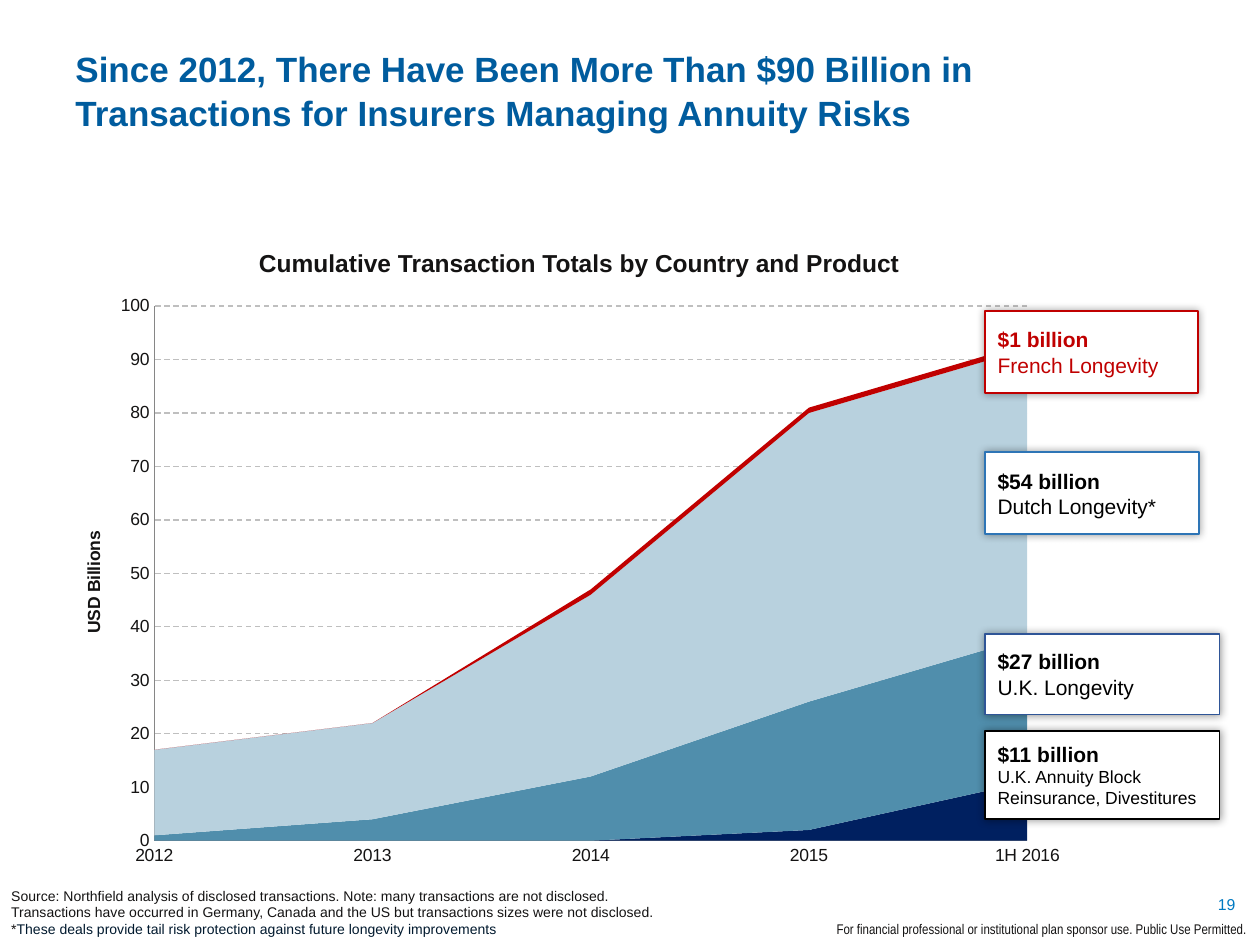
from collections import namedtuple
from dataclasses import dataclass

from lxml import etree
from pptx import Presentation
from pptx.chart.data import CategoryChartData
from pptx.dml.color import RGBColor
from pptx.enum.chart import XL_CHART_TYPE as ChartType, XL_TICK_MARK as TickMark
from pptx.enum.dml import MSO_LINE as LineStyle
from pptx.enum.shapes import MSO_SHAPE as Shape
from pptx.enum.text import MSO_ANCHOR as Anchor, PP_ALIGN as Align
from pptx.oxml import parse_xml
from pptx.oxml.ns import nsdecls, qn
from pptx.util import Pt

Box = namedtuple("Box", "left top width height")
Run = namedtuple("Run", "text size color bold", defaults=[False])


@dataclass(frozen=True)
class Theme:
    font: str = "Arial"
    narrow: str = "Arial Narrow"
    title: str = "005C9E"
    ink: str = "141313"
    note: str = "00192E"
    number: str = "007AC2"
    black: str = "000000"
    white: str = "FFFFFF"
    red: str = "C00000"
    dutch_edge: str = "2E75B6"
    uk_edge: str = "2F5597"
    grid: str = "BFBFBF"
    axis: str = "868686"
    navy: str = "002060"
    teal: str = "508EAC"
    pale: str = "B8D1DE"
    title_size: float = 20
    heading_size: float = 14
    amount_size: float = 12
    chart_size: float = 10
    number_size: float = 9
    small_size: float = 8


THEME = Theme()


def rgb(color):
    return RGBColor.from_string(color)


def apply(target, values):
    for name, value in values.items():
        setattr(target, name, value)


def style_font(font, size, color, bold=False, name=THEME.font):
    apply(font, {"name": name, "size": Pt(size), "bold": bold})
    font.color.rgb = rgb(color)


def write(frame, paragraphs, align=Align.LEFT, anchor=Anchor.TOP, spacing=1.0, font=THEME.font):
    apply(frame, {"word_wrap": True, "vertical_anchor": anchor})
    for index, runs in enumerate(paragraphs):
        paragraph = frame.paragraphs[0] if index == 0 else frame.add_paragraph()
        apply(paragraph, {"alignment": align, "line_spacing": spacing})
        for part in runs:
            run = paragraph.add_run()
            run.text = part.text
            style_font(run.font, part.size, part.color, part.bold, font)


def add_text(slide, box, paragraphs, **layout):
    textbox = slide.shapes.add_textbox(*map(Pt, box))
    write(textbox.text_frame, paragraphs, **layout)


def add_header(slide, box):
    title = "Since 2012, There Have Been More Than $90 Billion in Transactions for Insurers Managing Annuity Risks"
    add_text(slide, box, [[Run(title, THEME.title_size, THEME.title, True)]], spacing=1.05)


def add_footer(slide, box):
    small, ink = THEME.small_size, THEME.ink
    number = Box(box.left + 672, box.top + 4.3, 41, 18)
    legal = Box(box.left + 334, box.top + 19.4, 386, 17.3)
    sources = Box(box.left - 0.7, box.top, 547, 36)
    add_text(slide, number, [[Run("19", THEME.number_size, THEME.number)]],
             align=Align.RIGHT, anchor=Anchor.MIDDLE)
    permission = "For financial professional or institutional plan sponsor use. Public Use Permitted."
    add_text(slide, legal, [[Run(permission, small, ink)]], align=Align.RIGHT, font=THEME.narrow)
    add_text(slide, sources, [
        [Run("Source: Northfield analysis of disclosed transactions. Note: many transactions are not disclosed.", small, ink)],
        [Run("Transactions have occurred in Germany, Canada and the US but transactions sizes were not disclosed.", small, ink)],
        [Run("*", small, ink),
         Run("These deals provide tail risk protection against future longevity improvements", small, THEME.note)],
    ], anchor=Anchor.BOTTOM)


def manual_layout(target, **values):
    layout = parse_xml(f'<c:layout {nsdecls("c")}><c:manualLayout/></c:layout>')
    for tag, value in values.items():
        etree.SubElement(layout[0], qn(f"c:{tag}")).set("val", str(value))
    for previous in target.findall(qn("c:layout")):
        target.remove(previous)
    text = target.find(qn("c:tx"))
    target.insert(0 if text is None else 1, layout)


def add_totals_chart(slide, box):
    data = CategoryChartData()
    data.categories = ["2012", "2013", "2014", "2015", "1H 2016"]
    layers = [
        ("Series 1", [None, None, None, 2, 11], THEME.navy),
        ("Series 2", [1, 4, 12, 24, 27], THEME.teal),
        ("Series 3", [16, 18, 34, 54, 54], THEME.pale),
        ("Series 4", [None, None, 1, 1, 1], THEME.red),
    ]
    for name, values, _ in layers:
        data.add_series(name, values)
    chart = slide.shapes.add_chart(ChartType.AREA_STACKED, *map(Pt, box), data).chart
    apply(chart, {"has_legend": False, "has_title": False})
    style_font(chart.font, THEME.chart_size, THEME.ink)
    chart.plots[0].vary_by_categories = False
    for series, (_, _, color) in zip(chart.plots[0].series, layers):
        series.format.fill.solid()
        series.format.fill.fore_color.rgb = rgb(color)
        series.format.line.fill.background()

    years, billions = chart.category_axis, chart.value_axis
    for axis in (years, billions):
        apply(axis, {"major_tick_mark": TickMark.NONE, "minor_tick_mark": TickMark.NONE})
        axis.format.line.color.rgb = rgb(THEME.axis)
        axis.format.line.width = Pt(0.75)
    years.has_major_gridlines = False
    apply(billions, {"minimum_scale": 0, "maximum_scale": 100, "major_unit": 10,
                     "has_major_gridlines": True, "has_title": True})
    billions.tick_labels.number_format = "0"
    billions.tick_labels.number_format_is_linked = False
    grid = billions.major_gridlines.format.line
    grid.color.rgb = rgb(THEME.grid)
    apply(grid, {"width": Pt(0.75), "dash_style": LineStyle.DASH})
    caption = billions.axis_title.text_frame.paragraphs[0].add_run()
    caption.text = "USD Billions"
    style_font(caption.font, THEME.chart_size, THEME.ink, True)

    root = chart.element
    manual_layout(billions.axis_title.element, xMode="edge", yMode="edge", x=0.03, y=0.41)
    manual_layout(root.find(".//" + qn("c:plotArea")), layoutTarget="inner",
                  xMode="edge", yMode="edge", x=0.103, y=0.036, w=0.846, h=0.901)
    root.find(".//" + qn("c:crossBetween")).set("val", "midCat")
    root.find(".//" + qn("c:dispBlanksAs")).set("val", "zero")


def add_callout(slide, box, amount, product, color, edge, size):
    card = slide.shapes.add_shape(Shape.RECTANGLE, *map(Pt, box))
    card.shadow.inherit = False
    card.fill.solid()
    card.fill.fore_color.rgb = rgb(THEME.white)
    card.line.color.rgb = rgb(edge)
    card.line.width = Pt(1)
    effects = card.element.spPr.find(qn("a:effectLst"))
    effects.append(parse_xml(
        f'<a:outerShdw {nsdecls("a")} blurRad="{Pt(5)}" dist="0" dir="0" algn="ctr" rotWithShape="0">'
        f'<a:srgbClr val="{THEME.black}"><a:alpha val="40000"/></a:srgbClr></a:outerShdw>'))
    write(card.text_frame, [[Run(amount, THEME.amount_size, color, True)], [Run(product, size, color)]],
          anchor=Anchor.MIDDLE)


def add_callouts(slide, box):
    black, large = THEME.black, THEME.amount_size
    callouts = [
        (0, 121.7, 46.8, "$1 billion", "French Longevity", THEME.red, THEME.red, large),
        (80.7, 122.4, 46.8, "$54 billion", "Dutch Longevity*", black, THEME.dutch_edge, large),
        (184.4, box.width, 46.1, "$27 billion", "U.K. Longevity", black, THEME.uk_edge, large),
        (239.8, box.width, 50.4, "$11 billion", "U.K. Annuity Block Reinsurance, Divestitures",
         black, black, THEME.chart_size),
    ]
    for offset, width, height, *content in callouts:
        add_callout(slide, Box(box.left, box.top + offset, width, height), *content)


def add_chart_heading(slide, box):
    heading = "Cumulative Transaction Totals by Country and Product"
    add_text(slide, box, [[Run(heading, THEME.heading_size, THEME.ink, True)]], align=Align.CENTER)


def main():
    deck = Presentation()
    apply(deck, {"slide_width": Pt(720), "slide_height": Pt(540)})
    slide = deck.slides.add_slide(deck.slide_layouts[6])
    add_header(slide, Box(36, 22.3, 639.4, 90))
    add_footer(slide, Box(0, 503.3, 720, 36.7))
    add_totals_chart(slide, Box(27.4, 162.7, 589.7, 339.1))
    add_callouts(slide, Box(563, 177.8, 133.9, 290.2))
    add_chart_heading(slide, Box(77, 138.2, 508.3, 24.5))
    deck.save("out.pptx")


if __name__ == "__main__":
    main()
